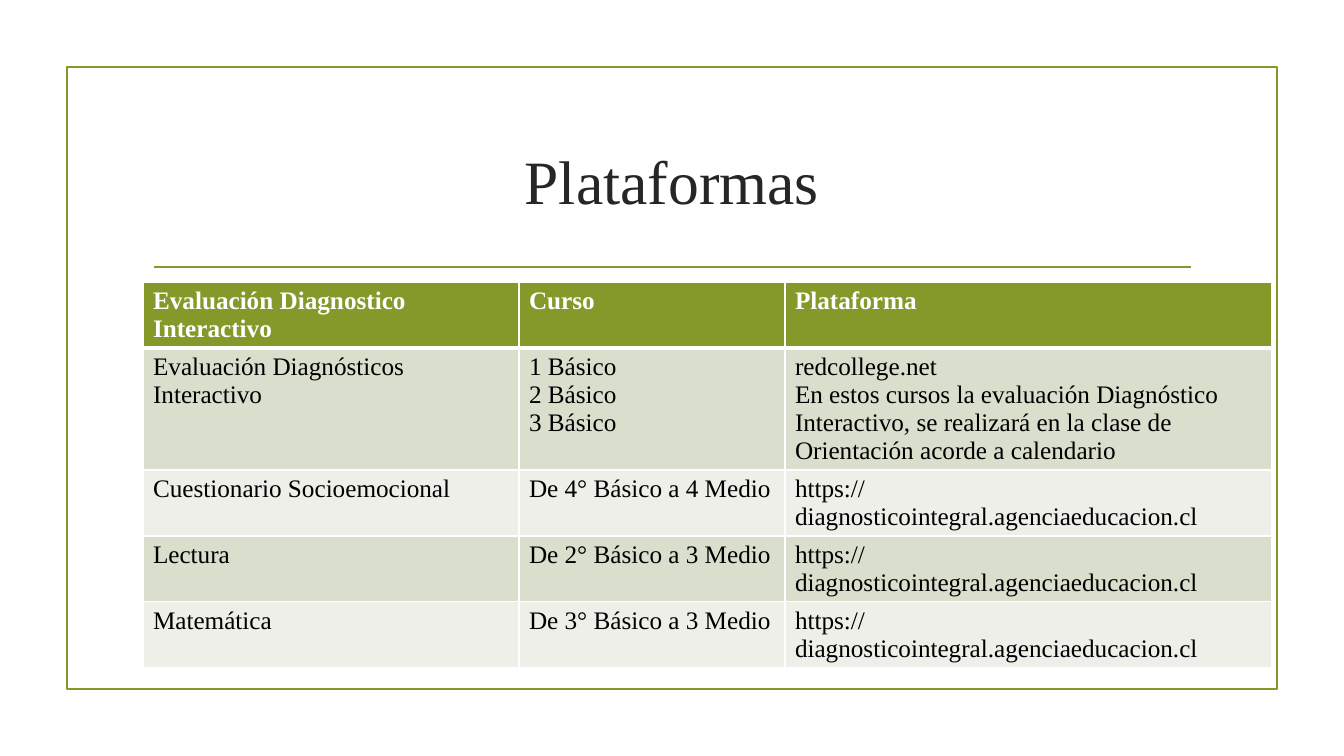
"""Build the slide that lists the platform for each diagnostic evaluation."""
from lxml.etree import SubElement
from pptx import Presentation
from pptx.dml.color import RGBColor
from pptx.enum.shapes import MSO_CONNECTOR, MSO_SHAPE
from pptx.enum.text import MSO_ANCHOR, MSO_AUTO_SIZE, PP_ALIGN
from pptx.oxml.ns import qn
from pptx.util import Emu, Pt

GREEN = RGBColor(0x83, 0x99, 0x2A)
SAGE = RGBColor(0xD9, 0xDE, 0xCD)
MIST = RGBColor(0xED, 0xEF, 0xE8)
CHARCOAL = RGBColor(0x26, 0x26, 0x26)
BLACK = RGBColor(0, 0, 0)
WHITE = RGBColor(0xFF, 0xFF, 0xFF)

FONT = "Times New Roman"
EMU_PER_PX = 914400 / 100.8
TITLE_ONLY = 5

PLATFORM_URL = "https://diagnosticointegral.agenciaeducacion.cl"
ROWS = [
    ("Evaluación Diagnostico Interactivo", "Curso", "Plataforma"),
    ("Evaluación Diagnósticos Interactivo", "1 Básico\n2 Básico\n3 Básico",
     "redcollege.net\nEn estos cursos la evaluación Diagnóstico Interactivo, "
     "se realizará en la clase de Orientación acorde a calendario"),
    ("Cuestionario Socioemocional", "De 4° Básico a 4 Medio", PLATFORM_URL),
    ("Lectura", "De 2° Básico a 3 Medio", PLATFORM_URL),
    ("Matemática", "De 3° Básico a 3 Medio", PLATFORM_URL),
]
COLUMN_WIDTHS = [376, 266, 487]
ROW_HEIGHTS = [65, 122, 66, 66, 66]


def px(*lengths):
    return [Emu(round(length * EMU_PER_PX)) for length in lengths]


class SlideBuilder:
    """Holds the deck, the current page and the style of its elements."""

    def __init__(self):
        self.deck = Presentation()
        self.deck.slide_width, self.deck.slide_height = px(1344, 756)
        self.page = self.deck.slides.add_slide(self.deck.slide_layouts[TITLE_ONLY])

    def fill_text(self, frame, text, alignment, color, **font_format):
        frame.text = text
        for para in frame.paragraphs:
            para.alignment = alignment
            span = para.runs[0]
            for name, value in {"name": FONT, **font_format}.items():
                setattr(span.font, name, value)
            span.font.color.rgb = color

    def outline(self, item):
        item.line.color.rgb = GREEN
        item.line.width = Pt(1.25)

    def title(self, text, left, top, width, height):
        box = self.page.shapes.title
        box.left, box.top, box.width, box.height = px(left, top, width, height)
        frame_format = {"word_wrap": True, "auto_size": MSO_AUTO_SIZE.NONE,
                        "vertical_anchor": MSO_ANCHOR.MIDDLE}
        for name, value in frame_format.items():
            setattr(box.text_frame, name, value)
        self.fill_text(box.text_frame, text, PP_ALIGN.CENTER, CHARCOAL, size=Pt(44))

    def frame(self, left, top, width, height):
        box = self.page.shapes.add_shape(
            MSO_SHAPE.RECTANGLE, *px(left, top, width, height))
        box.shadow.inherit = False
        box.fill.background()
        self.outline(box)

    def divider(self, left, right, top):
        line = self.page.shapes.add_connector(
            MSO_CONNECTOR.STRAIGHT, *px(left, top, right, top))
        self.outline(line)
        SubElement(line._element.spPr, qn("a:effectLst"))

    def borders(self, cell, widths):
        properties = cell._tc.get_or_add_tcPr()
        for side, width in widths.items():
            edge = SubElement(properties, qn(f"a:{side}"), w=str(Pt(width)))
            fill = SubElement(edge, qn("a:solidFill"))
            SubElement(fill, qn("a:srgbClr"), val=str(WHITE))

    def table(self, left, top, rows, widths, heights):
        table = self.page.shapes.add_table(
            len(rows), len(widths),
            *px(left, top, sum(widths), sum(heights))).table
        for column, width in zip(table.columns, px(*widths)):
            column.width = width
        for row, height in zip(table.rows, px(*heights)):
            row.height = height
        for row_index, texts in enumerate(rows):
            header = row_index == 0
            band = GREEN if header else (MIST, SAGE)[row_index % 2]
            border_widths = {"lnL": 1, "lnR": 1, "lnT": 3 if row_index == 1 else 1,
                             "lnB": 3 if header else 1}
            for column_index, text in enumerate(texts):
                cell = table.cell(row_index, column_index)
                self.borders(cell, border_widths)
                cell.fill.solid()
                cell.fill.fore_color.rgb = band
                self.fill_text(cell.text_frame, text, PP_ALIGN.LEFT,
                               WHITE if header else BLACK, size=Pt(18), bold=header)


def main():
    builder = SlideBuilder()
    builder.frame(67, 67, 1210, 622)
    builder.divider(154, 1191, 267)
    builder.title("Plataformas", 143, 108, 1058, 144)
    builder.table(143, 282, ROWS, COLUMN_WIDTHS, ROW_HEIGHTS)
    builder.deck.save("out.pptx")


if __name__ == "__main__":
    main()
